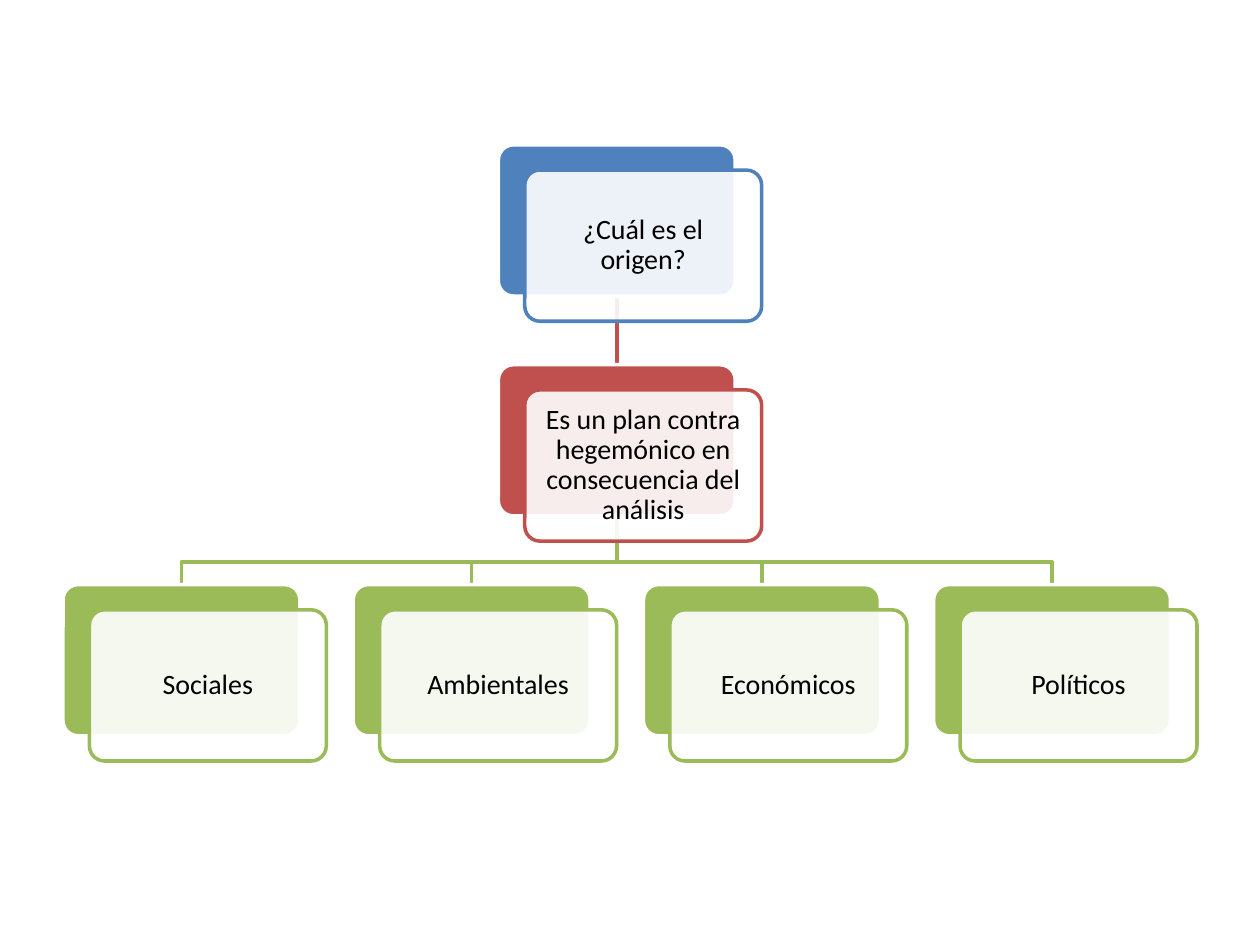
"""Build a three-level hierarchy slide of layered rounded cards."""
from lxml.etree import SubElement
from pptx import Presentation
from pptx.dml.color import RGBColor
from pptx.enum.shapes import MSO_CONNECTOR as Connector, MSO_SHAPE as Shape
from pptx.enum.text import MSO_ANCHOR as Anchor, PP_ALIGN as Align
from pptx.oxml.ns import qn
from pptx.util import Inches, Pt

BLUE = RGBColor(0x4F, 0x81, 0xBD)
RED = RGBColor(0xC0, 0x50, 0x4D)
GREEN = RGBColor(0x9B, 0xBB, 0x59)
WHITE = RGBColor(0xFF, 0xFF, 0xFF)
BLACK = RGBColor(0, 0, 0)

LEVELS = [
    (BLUE, ["¿Cuál es el origen?"]),
    (RED, ["Es un plan contra hegemónico en consecuencia del análisis"]),
    (GREEN, ["Sociales", "Ambientales", "Económicos", "Políticos"]),
]
COLUMNS = 4
LEFT, TOP = 0.5, 1.15
COLUMN_STEP = (7.41 - LEFT) / (COLUMNS - 1)
ROW_STEP = (4.64 - TOP) / (len(LEVELS) - 1)
CARD_WIDTH, CARD_HEIGHT = 1.88, 1.2
SHIFT_X, SHIFT_Y = 0.21, 0.2
TEXT_INSET = 0.04
BEND_ABOVE = 0.18
LINE_WIDTH = Pt(2)
FRAME_FORMAT = {
    "word_wrap": True, "vertical_anchor": Anchor.MIDDLE,
    **{f"margin_{side}": Inches(0.07) for side in ("left", "right", "top", "bottom")},
}
PARA_FORMAT = {"alignment": Align.CENTER, "line_spacing": 0.9, "space_after": Pt(5.6)}
FONT_FORMAT = {"name": "Calibri", "size": Pt(16)}


def apply_format(target, values):
    for name, value in values.items():
        setattr(target, name, value)


def set_line(shape, color):
    shape.line.color.rgb = color
    shape.line.width = LINE_WIDTH


def corner(row, column, count):
    offset = (COLUMNS - count) / 2
    return LEFT + (column + offset) * COLUMN_STEP, TOP + row * ROW_STEP


def add_card(shapes, left, top, fill, line, opacity=100):
    card = shapes.add_shape(Shape.ROUNDED_RECTANGLE, Inches(left), Inches(top),
                            Inches(CARD_WIDTH), Inches(CARD_HEIGHT))
    card.adjustments[0] = 0.1
    card.shadow.inherit = False
    card.fill.solid()
    card.fill.fore_color.rgb = fill
    if opacity < 100:
        color = card.fill._xPr.find(qn("a:solidFill"))[0]
        SubElement(color, qn("a:alpha")).set("val", str(opacity * 1000))
    set_line(card, line)


def add_label(shapes, left, top, text):
    box = shapes.add_textbox(Inches(left + TEXT_INSET), Inches(top + TEXT_INSET),
                             Inches(CARD_WIDTH - 2 * TEXT_INSET),
                             Inches(CARD_HEIGHT - 2 * TEXT_INSET))
    apply_format(box.text_frame, FRAME_FORMAT)
    para = box.text_frame.paragraphs[0]
    apply_format(para, PARA_FORMAT)
    span = para.add_run()
    span.text = text
    apply_format(span.font, FONT_FORMAT)
    span.font.color.rgb = BLACK


def add_link(shapes, parent, child, color):
    start_x, end_x = (Inches(left + CARD_WIDTH / 2) for left in (parent[0], child[0]))
    start_y, end_y = Inches(parent[1] + CARD_HEIGHT), Inches(child[1])
    if start_x == end_x:
        link = shapes.add_connector(Connector.STRAIGHT, start_x, start_y, end_x, end_y)
        SubElement(link._element.spPr, qn("a:effectLst"))
    else:
        bend_y = end_y - Inches(BEND_ABOVE)
        builder = shapes.build_freeform(start_x, start_y)
        builder.add_line_segments([(start_x, bend_y), (end_x, bend_y), (end_x, end_y)],
                                  close=False)
        link = builder.convert_to_shape()
        link.fill.background()
        link.shadow.inherit = False
    set_line(link, color)


def main():
    deck = Presentation()
    deck.slide_width, deck.slide_height = Inches(10), Inches(7.5)
    shapes = deck.slides.add_slide(deck.slide_layouts[6]).shapes
    places = [[corner(row, column, len(labels)) for column in range(len(labels))]
              for row, (_, labels) in enumerate(LEVELS)]
    for row in range(len(LEVELS) - 1, 0, -1):
        for child in reversed(places[row]):
            add_link(shapes, places[row - 1][0], child, LEVELS[row][0])
    for (color, labels), corners in zip(LEVELS, places):
        for text, (left, top) in zip(labels, corners):
            add_card(shapes, left, top, color, WHITE)
            add_card(shapes, left + SHIFT_X, top + SHIFT_Y, WHITE, color, opacity=90)
            add_label(shapes, left + SHIFT_X, top + SHIFT_Y, text)
    deck.save("out.pptx")


if __name__ == "__main__":
    main()
